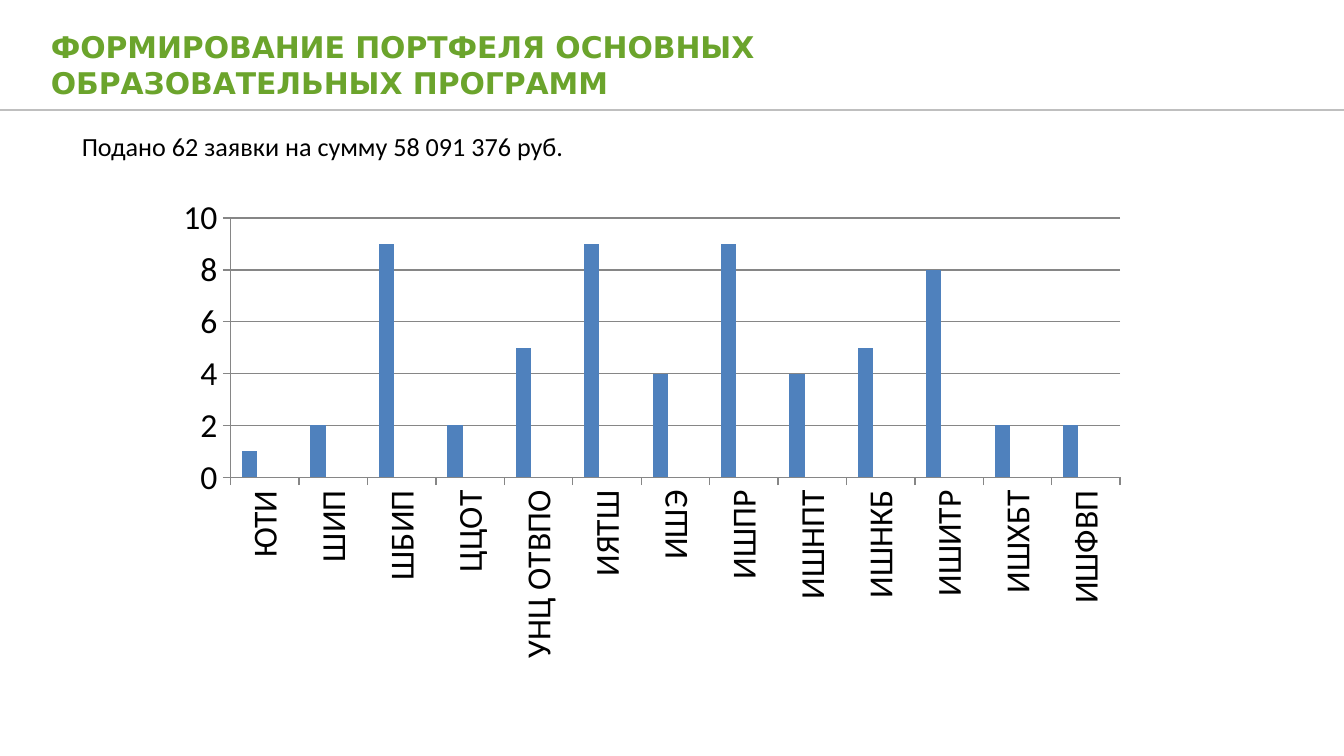
from lxml import etree
from pptx import Presentation
from pptx.chart import data
from pptx.dml.color import RGBColor
from pptx.enum import chart as charts, shapes, text
from pptx.oxml import ns
from pptx.util import Pt

GREEN = RGBColor(0x6B, 0xA4, 0x2C)
BLACK = RGBColor(0, 0, 0)
RULE_GREY = RGBColor(0xBF, 0xBF, 0xBF)
AXIS_GREY = RGBColor(0x86, 0x86, 0x86)
SERIES_COLORS = [
    RGBColor(0x4F, 0x81, 0xBD),
    RGBColor(0xC0, 0x50, 0x4D),
    RGBColor(0x9B, 0xBB, 0x59),
]

APPLICATIONS = {
    "ЮТИ": 1, "ШИП": 2, "ШБИП": 9, "ЦЦОТ": 2, "УНЦ ОТВПО": 5,
    "ИЯТШ": 9, "ИШЭ": 4, "ИШПР": 9, "ИШНПТ": 4, "ИШНКБ": 5,
    "ИШИТР": 8, "ИШХБТ": 2, "ИШФВП": 2,
}


def write_text(shape, content, font="Calibri", size=14, color=BLACK,
               bold=False, anchor=text.MSO_ANCHOR.TOP):
    frame = shape.text_frame
    frame.word_wrap = True
    frame.auto_size = text.MSO_AUTO_SIZE.NONE
    frame.vertical_anchor = anchor
    paragraph = frame.paragraphs[0]
    paragraph.alignment = text.PP_ALIGN.LEFT
    run = paragraph.add_run()
    run.text = content
    run.font.name = font
    run.font.size = Pt(size)
    run.font.bold = bold
    run.font.color.rgb = color


presentation = Presentation()
presentation.slide_width = Pt(720)
presentation.slide_height = Pt(405)
slide = presentation.slides.add_slide(presentation.slide_layouts[5])

# Title
title = slide.shapes.title
title.left, title.top, title.width, title.height = Pt(20), Pt(15.5), Pt(499), Pt(38)
write_text(title, "ФОРМИРОВАНИЕ ПОРТФЕЛЯ ОСНОВНЫХ ОБРАЗОВАТЕЛЬНЫХ ПРОГРАММ",
           font="DejaVu Sans", size=16, color=GREEN, bold=True,
           anchor=text.MSO_ANCHOR.MIDDLE)

# Rule under the title
rule = slide.shapes.add_connector(
    shapes.MSO_CONNECTOR.STRAIGHT, Pt(720), Pt(59), Pt(0), Pt(59))
rule.line.color.rgb = RULE_GREY
rule.line.width = Pt(1)
etree.SubElement(rule._element.spPr, ns.qn("a:effectLst"))

# Summary line
summary = slide.shapes.add_textbox(Pt(36.7), Pt(66.2), Pt(544), Pt(41))
write_text(summary, "Подано 62 заявки на сумму 58 091 376 руб.")

# Applications per school; the two empty series keep their place in each cluster
chart_data = data.CategoryChartData()
chart_data.categories = list(APPLICATIONS)
chart_data.add_series("Series 1", list(APPLICATIONS.values()))
for name in ("Series 2", "Series 3"):
    chart_data.add_series(name, [None] * len(APPLICATIONS))

chart = slide.shapes.add_chart(
    charts.XL_CHART_TYPE.COLUMN_CLUSTERED,
    Pt(87.8), Pt(100.8), Pt(522.7), Pt(257), chart_data).chart
chart.has_legend = False
chart.has_title = False
chart.font.name = "Calibri"
chart.font.size = Pt(18)
chart.font.color.rgb = BLACK

plot = chart.plots[0]
plot.gap_width = 150
plot.vary_by_categories = False
for series, color in zip(plot.series, SERIES_COLORS):
    series.format.fill.solid()
    series.format.fill.fore_color.rgb = color

# Axes and gridlines
chart.value_axis.minimum_scale = 0
chart.value_axis.maximum_scale = 10
chart.value_axis.major_unit = 2
chart.value_axis.has_major_gridlines = True
for axis in (chart.category_axis, chart.value_axis):
    axis.major_tick_mark = charts.XL_TICK_MARK.OUTSIDE
    axis.minor_tick_mark = charts.XL_TICK_MARK.NONE
    axis.tick_labels.font.name = "Calibri"
    axis.tick_labels.font.size = Pt(18)
    axis.tick_labels.font.color.rgb = BLACK
for part in (chart.category_axis, chart.value_axis, chart.value_axis.major_gridlines):
    part.format.line.color.rgb = AXIS_GREY
    part.format.line.width = Pt(0.75)

# School names read upwards
label_body = chart.category_axis._element.find(ns.qn("c:txPr")).find(ns.qn("a:bodyPr"))
label_body.set("rot", "-5400000")
label_body.set("vert", "horz")

presentation.save("out.pptx")
